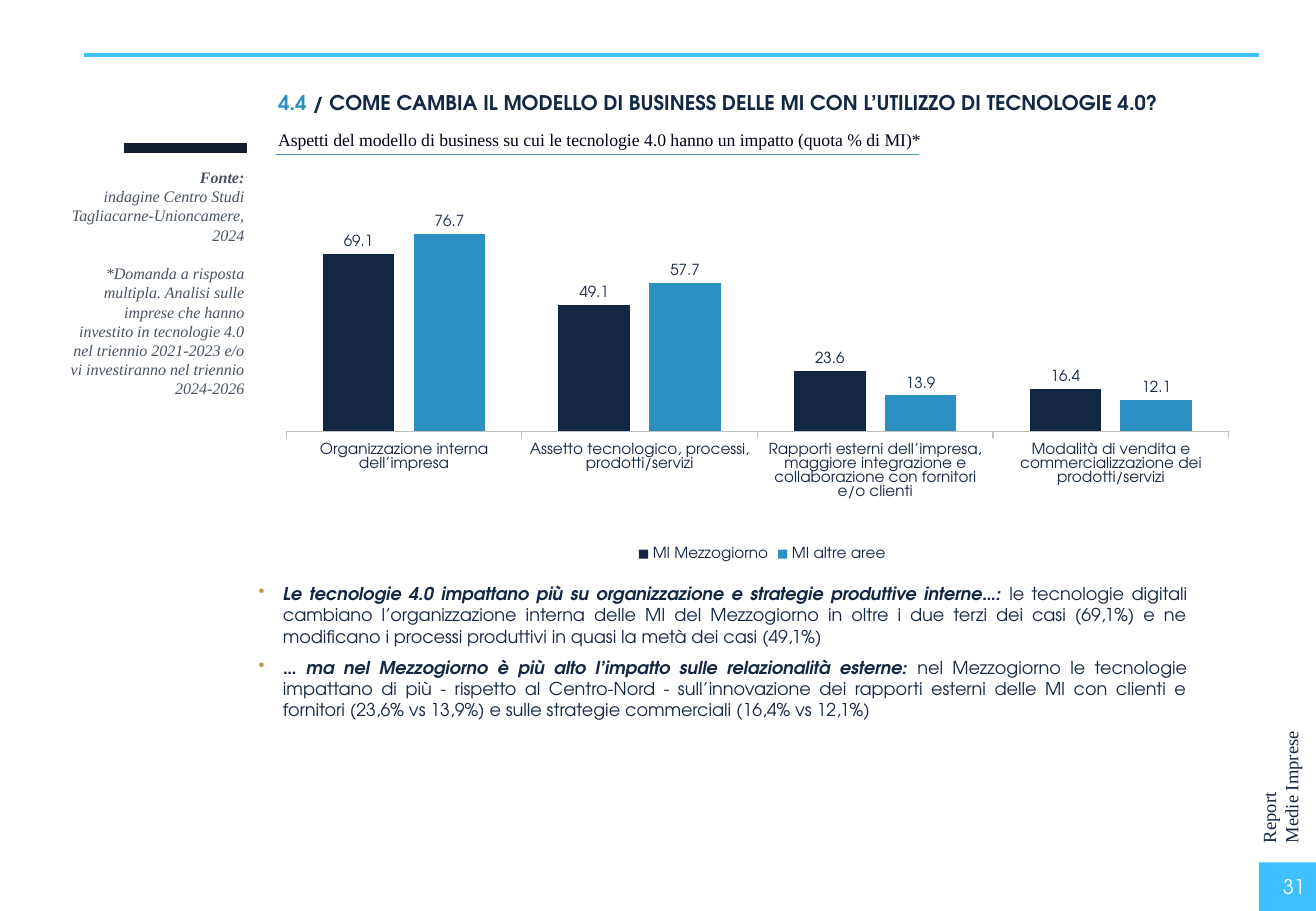
from lxml.etree import SubElement
from pptx import Presentation
from pptx.chart.data import CategoryChartData
from pptx.dml.color import RGBColor
from pptx.enum.chart import XL_CHART_TYPE as ChartType, XL_LABEL_POSITION as LabelPos
from pptx.enum.chart import XL_LEGEND_POSITION as LegendPos, XL_TICK_MARK as Tick
from pptx.enum.shapes import MSO_CONNECTOR as Connector, MSO_SHAPE as Shape
from pptx.enum.text import MSO_ANCHOR as Anchor, MSO_AUTO_SIZE as AutoSize, PP_ALIGN as Align
from pptx.oxml import parse_xml
from pptx.oxml.ns import nsdecls, qn
from pptx.util import Pt

PX = 9144  # one px is a hundredth of an inch
COLORS = {
    "navy": "132745", "blue": "2B8FC2", "sky": "40BFFF", "rule": "5397C7",
    "bar": "151E31", "gray": "485463", "ink": "000019", "gold": "BE9655",
    "axis": "BFBFBF", "white": "FFFFFF",
}
SANS, SERIF = "TeX Gyre Adventor", "Times New Roman"


def apply(target, values):
    for name, value in values.items():
        setattr(target, name, value)


class ReportSlide:
    def __init__(self, width, height):
        self.prs = Presentation()
        apply(self.prs, {"slide_width": width * PX, "slide_height": height * PX})
        self.slide = self.prs.slides.add_slide(self.prs.slide_layouts[5])
        self.shapes = self.slide.shapes

    def color(self, name):
        return RGBColor.from_string(COLORS[name])

    def style(self, font, face, size, color, **extra):
        apply(font, {"name": face, "size": Pt(size), **extra})
        font.color.rgb = self.color(color)

    def fill(self, frame, paragraphs, face, size, align=Align.LEFT, anchor=Anchor.TOP,
             spacing=None, bullet=None):
        """Each paragraph is a list of (text, color, font extras)."""
        apply(frame, {"word_wrap": True, "vertical_anchor": anchor,
                      "auto_size": AutoSize.NONE})
        for index, runs in enumerate(paragraphs):
            para = frame.paragraphs[0] if index == 0 else frame.add_paragraph()
            if bullet:
                self.bullet(para, bullet)
            apply(para, {"alignment": align, **(spacing or {})})
            for text, color, extra in runs:
                run = para.add_run()
                run.text = text
                self.style(run.font, face, size, color, **extra)

    def bullet(self, para, color):
        props = para._p.get_or_add_pPr()
        props.set("marL", str(20 * PX))
        props.set("indent", str(-20 * PX))
        SubElement(SubElement(props, qn("a:buClr")), qn("a:srgbClr"), val=COLORS[color])
        SubElement(props, qn("a:buChar"), char="•")

    def title(self, box, runs, face, size):
        title = self.shapes.title
        apply(title, dict(zip(("left", "top", "width", "height"), (v * PX for v in box))))
        self.fill(title.text_frame, [runs], face, size)

    def text(self, box, paragraphs, face, size, rotation=0, **options):
        shape = self.shapes.add_textbox(*(v * PX for v in box))
        shape.rotation = rotation
        self.fill(shape.text_frame, paragraphs, face, size, **options)
        return shape.text_frame

    def block(self, box, color):
        shape = self.shapes.add_shape(Shape.RECTANGLE, *(v * PX for v in box))
        shape.shadow.inherit = False
        shape.fill.solid()
        shape.fill.fore_color.rgb = self.color(color)
        shape.line.fill.background()

    def rule(self, left, right, y, color, weight):
        line = self.shapes.add_connector(Connector.STRAIGHT, left * PX, y * PX,
                                         right * PX, y * PX)
        line.line.color.rgb = self.color(color)
        line.line.width = Pt(weight)
        SubElement(line._element.spPr, qn("a:effectLst"))

    def columns(self, box, categories, series, plot):
        data = CategoryChartData(number_format="0.0")
        data.categories = categories
        for name, values, _ in series:
            data.add_series(name, values)
        chart = self.shapes.add_chart(ChartType.COLUMN_CLUSTERED,
                                      *(v * PX for v in box), data).chart
        apply(chart, {"has_title": False, "has_legend": True})
        self.style(chart.font, SANS, 10, "navy")
        apply(chart.legend, {"position": LegendPos.BOTTOM, "include_in_layout": False})
        self.style(chart.legend.font, SANS, 9, "navy")

        # Axes
        apply(chart.value_axis, {"visible": False, "has_major_gridlines": False,
                                 "minimum_scale": 0, "maximum_scale": 100})
        category_axis = chart.category_axis
        apply(category_axis, {"major_tick_mark": Tick.OUTSIDE, "minor_tick_mark": Tick.NONE})
        self.style(category_axis.tick_labels.font, SANS, 9, "navy")
        category_axis.format.line.color.rgb = self.color("axis")
        category_axis.format.line.width = Pt(0.75)

        # Columns and their values
        columns = chart.plots[0]
        apply(columns, {"gap_width": 102, "overlap": -27, "vary_by_categories": False})
        for column, (_, _, color) in zip(columns.series, series):
            column.format.fill.solid()
            column.format.fill.fore_color.rgb = self.color(color)
            labels = column.data_labels
            apply(labels, {"show_value": True, "position": LabelPos.OUTSIDE_END,
                           "number_format": "0.0", "number_format_is_linked": False})
            self.style(labels.font, SANS, 9, "navy")

        # Inner plot area as shares of the chart
        area = chart._chartSpace.chart.plotArea
        for layout in area.findall(qn("c:layout")):
            area.remove(layout)
        sizes = "".join(f'<c:{key} val="{share}"/>' for key, share in zip("xywh", plot))
        area.insert(0, parse_xml(
            f'<c:layout {nsdecls("c")}><c:manualLayout><c:layoutTarget val="inner"/>'
            f'<c:xMode val="edge"/><c:yMode val="edge"/>{sizes}</c:manualLayout></c:layout>'))


def main():
    report = ReportSlide(1083, 750)
    strong = {"bold": True, "italic": True}
    slanted = {"italic": True}

    # Page frame
    report.block((1036, 710, 47, 40), "sky")
    report.text((959, 586, 189, 47), [[("Report", "navy", {})], [("Medie Imprese", "navy", {})]],
                SERIF, 11, rotation=270)
    report.rule(69, 1036, 45, "sky", 2.5)
    report.text((840, 710, 244, 40), [[("31", "white", {})]], SANS, 12,
                align=Align.RIGHT, anchor=Anchor.MIDDLE)

    # Heading
    report.title((219, 69, 863, 30), [
        ("4.4 ", "blue", {"bold": True}),
        ("/ COME CAMBIA IL MODELLO DI BUSINESS DELLE MI CON L’UTILIZZO DI TECNOLOGIE 4.0?",
         "navy", {"bold": True})], SANS, 12)
    report.text((219, 101, 815, 28), [[
        ("Aspetti del modello di business su cui le tecnologie 4.0 hanno un impatto "
         "(quota % di MI)*", "ink", {})]], SERIF, 10.5)
    report.rule(227, 756, 127, "rule", 0.75)

    # Source note
    report.rule(102, 203, 122, "bar", 6)
    source = report.text((47, 133, 164, 234), [
        [("Fonte:", "gray", strong)],
        [("indagine Centro Studi Tagliacarne-Unioncamere, 2024", "gray", slanted)],
        [("*Domanda a risposta multipla. Analisi sulle imprese che hanno investito in "
          "tecnologie 4.0 nel triennio 2021-2023 e/o vi investiranno nel triennio 2024-2026",
          "gray", slanted)]], SERIF, 9.5, align=Align.RIGHT)
    source.paragraphs[-1].space_before = Pt(11.4)

    # Impact chart
    report.columns(
        (235, 130, 784, 336),
        ["Organizzazione interna dell’impresa",
         "Assetto tecnologico, processi, prodotti/servizi",
         "Rapporti esterni dell’impresa, maggiore integrazione e collaborazione "
         "con fornitori e/o clienti",
         "Modalità di vendita e commercializzazione dei prodotti/servizi"],
        [("MI Mezzogiorno", (69.1, 49.1, 23.6, 16.4), "navy"),
         ("MI altre aree", (76.7, 57.7, 13.9, 12.1), "blue")],
        plot=(0, 0.04, 0.99, 0.63))

    # Findings
    findings = [
        ("Le tecnologie 4.0 impattano più su organizzazione e strategie produttive interne…: ",
         "le tecnologie digitali cambiano l’organizzazione interna delle MI del Mezzogiorno "
         "in oltre i due terzi dei casi (69,1%) e ne modificano i processi produttivi in "
         "quasi la metà dei casi (49,1%)"),
        ("… ma nel Mezzogiorno è più alto l’impatto sulle relazionalità esterne: ",
         "nel Mezzogiorno le tecnologie impattano di più - rispetto al Centro-Nord - "
         "sull’innovazione dei rapporti esterni delle MI con clienti e fornitori "
         "(23,6% vs 13,9%) e sulle strategie commerciali (16,4% vs 12,1%)"),
    ]
    report.text((203, 475, 784, 125),
                [[(claim, "navy", strong), (detail, "navy", {})] for claim, detail in findings],
                SANS, 10.5, align=Align.JUSTIFY, bullet="gold", spacing={"space_after": Pt(6)})

    report.prs.save("out.pptx")


if __name__ == "__main__":
    main()
